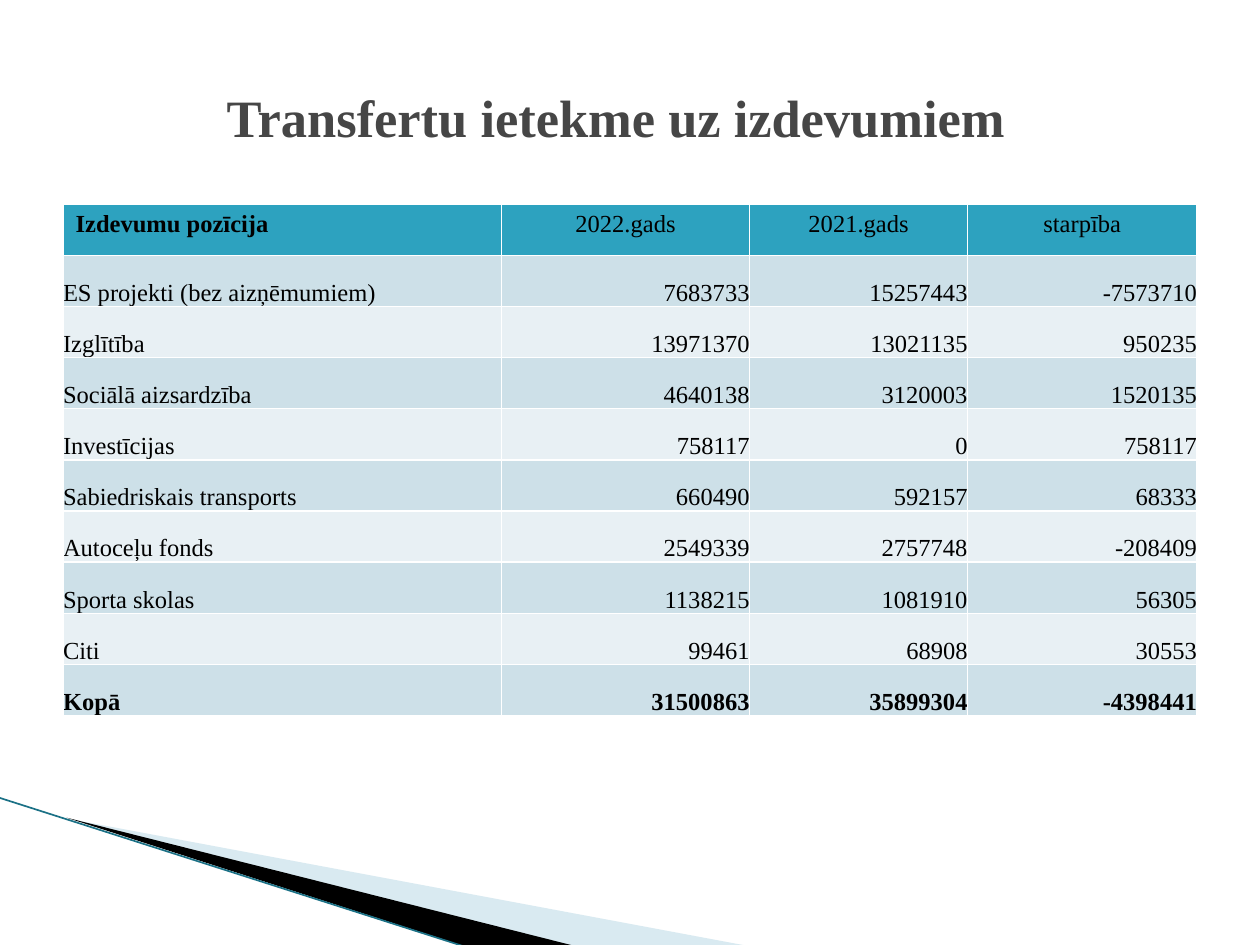
from lxml.etree import SubElement
from pptx import Presentation
from pptx.dml.color import RGBColor
from pptx.enum.shapes import MSO_CONNECTOR as Connector
from pptx.enum.text import MSO_ANCHOR as Anchor, PP_ALIGN as Align
from pptx.oxml.ns import qn
from pptx.util import Inches, Pt

TITLE_GRAY = RGBColor(0x46, 0x46, 0x46)
BLACK = RGBColor(0x00, 0x00, 0x00)
HEADER_TEAL = RGBColor(0x2D, 0xA2, 0xBF)
BAND_DARK = RGBColor(0xCD, 0xE0, 0xE8)
BAND_LIGHT = RGBColor(0xE8, 0xF0, 0xF4)
PALE_BLUE = RGBColor(0xA0, 0xCB, 0xDC)
EDGE_TEAL = RGBColor(0x1B, 0x71, 0x86)
FONT = "Times New Roman"

COLUMN_WIDTHS = (3.48, 1.97, 1.73, 1.82)
TABLE_LEFT, TABLE_TOP, TABLE_HEIGHT = 0.5, 1.62, 4.06
ROWS = (
    ("Izdevumu pozīcija", "2022.gads", "2021.gads", "starpība"),
    ("ES projekti (bez aizņēmumiem)", "7683733", "15257443", "-7573710"),
    ("Izglītība", "13971370", "13021135", "950235"),
    ("Sociālā aizsardzība", "4640138", "3120003", "1520135"),
    ("Investīcijas", "758117", "0", "758117"),
    ("Sabiedriskais transports", "660490", "592157", "68333"),
    ("Autoceļu fonds", "2549339", "2757748", "-208409"),
    ("Sporta skolas", "1138215", "1081910", "56305"),
    ("Citi", "99461", "68908", "30553"),
    ("Kopā", "31500863", "35899304", "-4398441"),
)


def apply(target, values):
    """Set each attribute named in values on the target."""
    for name, value in values.items():
        setattr(target, name, value)


def write_text(para, text, size, color, bold, align):
    """Fill a paragraph with one formatted span."""
    para.alignment = align
    span = para.add_run()
    span.text = text
    apply(span.font, {"name": FONT, "size": Pt(size), "bold": bold})
    span.font.color.rgb = color


def add_wedge(slide, points, color, opacity=100):
    """Draw a closed outline through points given in inches."""
    start, *others = [(Inches(x), Inches(y)) for x, y in points]
    builder = slide.shapes.build_freeform(*start)
    builder.add_line_segments(others, close=True)
    wedge = builder.convert_to_shape()
    wedge.shadow.inherit = False
    wedge.fill.solid()
    wedge.fill.fore_color.rgb = color
    wedge.line.fill.background()
    if opacity < 100:
        fill_color = wedge.fill._xPr.find(qn("a:solidFill"))[0]
        SubElement(fill_color, qn("a:alpha"), val=str(opacity * 1000))


def add_edge(slide, start, end, color, width):
    """Draw a straight line without a shadow."""
    ends = [Inches(value) for value in (*start, *end)]
    edge = slide.shapes.add_connector(Connector.STRAIGHT, *ends)
    edge.line.color.rgb = color
    edge.line.width = Pt(width)
    SubElement(edge._element.spPr, qn("a:effectLst"))


def add_title(slide, text):
    """Place and format the title placeholder."""
    title = slide.shapes.title
    apply(title, {"left": Inches(0.5), "top": Inches(0.3),
                  "width": Inches(9), "height": Inches(1.25)})
    apply(title.text_frame, {"vertical_anchor": Anchor.MIDDLE, "word_wrap": True,
                             "margin_right": Inches(0.32)})
    write_text(title.text_frame.paragraphs[0], text, 30, TITLE_GRAY, True, Align.CENTER)


def format_cell(cell, text, row, column):
    """Write one cell in the style of its row and column."""
    is_header, is_first = row == 0, column == 0
    is_total = row == len(ROWS) - 1
    cell.fill.solid()
    if is_header:
        cell.fill.fore_color.rgb = HEADER_TEAL
    else:
        cell.fill.fore_color.rgb = BAND_DARK if row % 2 else BAND_LIGHT
        apply(cell, {"vertical_anchor": Anchor.BOTTOM, "margin_left": 0,
                     "margin_top": 0, "margin_right": 0, "margin_bottom": 0})
    value_align = Align.CENTER if is_header else Align.RIGHT
    write_text(cell.text_frame.paragraphs[0], text, 14, BLACK,
               is_total or (is_header and is_first),
               Align.LEFT if is_first else value_align)


def add_spending_table(slide):
    """Add the table of spending by position and year."""
    table = slide.shapes.add_table(
        len(ROWS), len(COLUMN_WIDTHS), Inches(TABLE_LEFT), Inches(TABLE_TOP),
        Inches(sum(COLUMN_WIDTHS)), Inches(TABLE_HEIGHT)).table
    for column, width in zip(table.columns, COLUMN_WIDTHS):
        column.width = Inches(width)
    for row, texts in enumerate(ROWS):
        for column, text in enumerate(texts):
            format_cell(table.cell(row, column), text, row, column)


def main():
    """Build and save the slide."""
    deck = Presentation()
    deck.slide_width, deck.slide_height = Inches(10), Inches(7.5)
    slide = deck.slides.add_slide(deck.slide_layouts[5])
    add_wedge(slide, [(0.55, 6.5), (5.95, 7.51), (4.56, 7.51)], PALE_BLUE, 40)
    add_wedge(slide, [(0.53, 6.49), (4.57, 7.51), (3.72, 7.52)], BLACK)
    add_edge(slide, (-0.01, 6.33), (3.71, 7.52), EDGE_TEAL, 0.95)
    add_spending_table(slide)
    add_title(slide, "Transfertu ietekme uz izdevumiem")
    deck.save("out.pptx")


if __name__ == "__main__":
    main()
